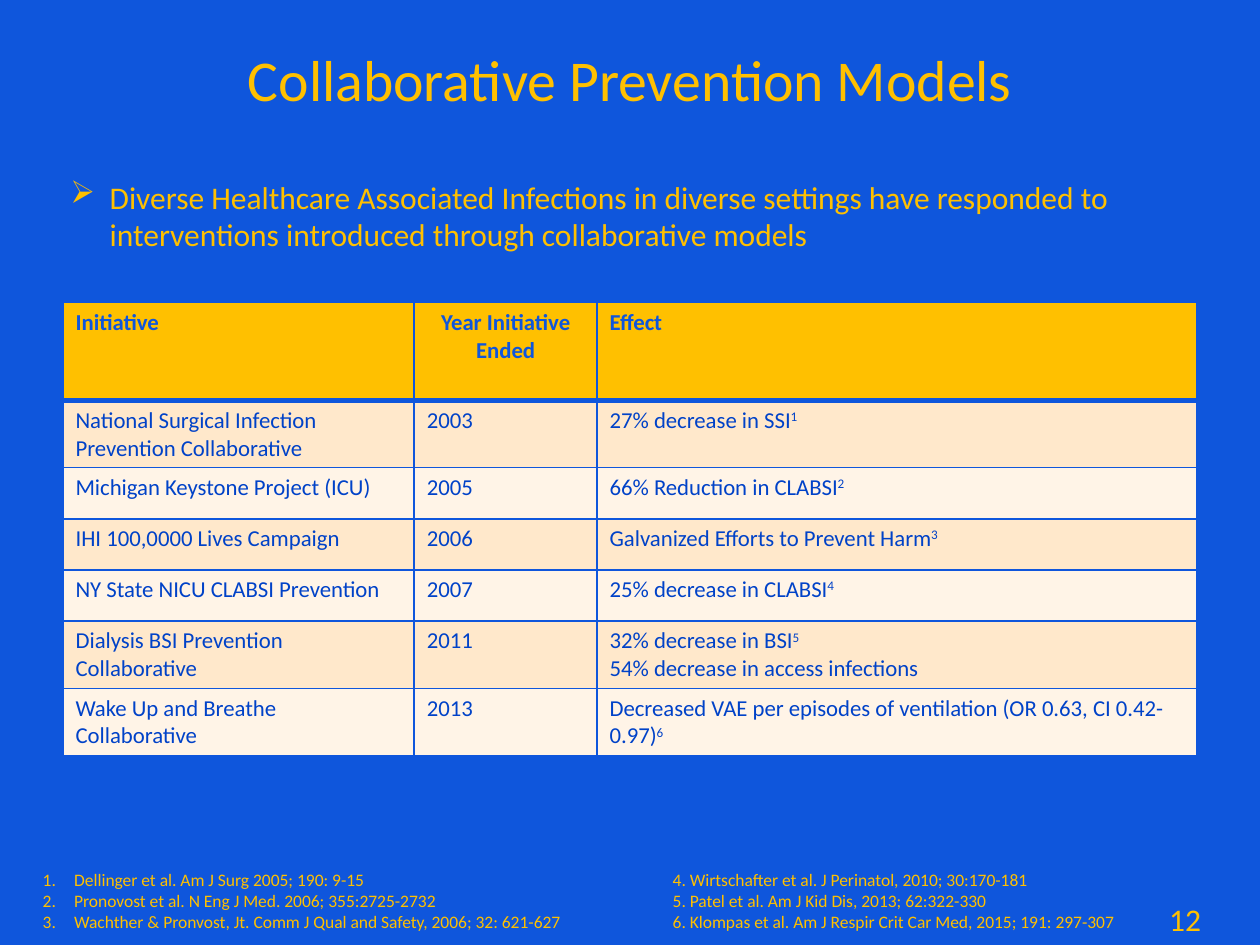
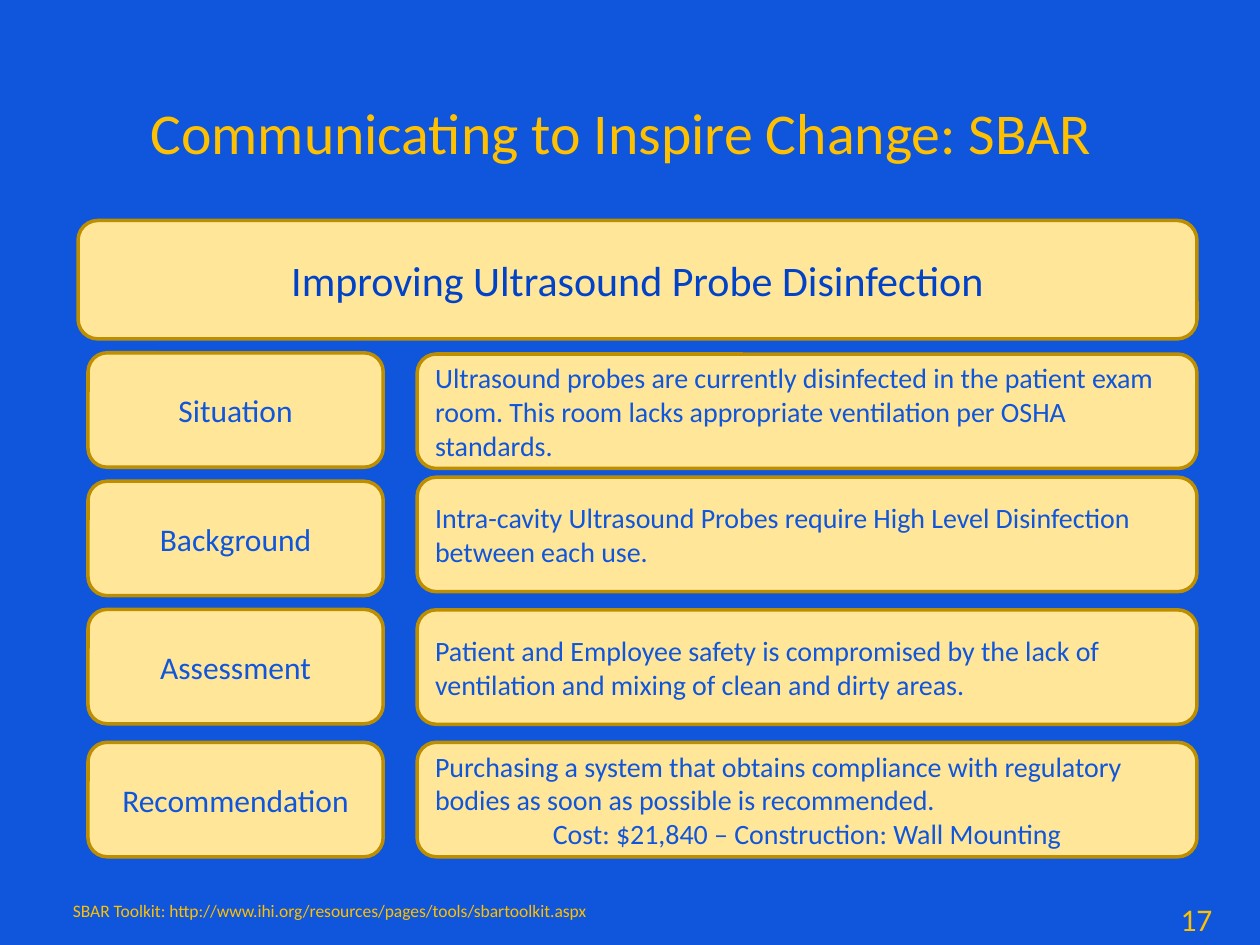
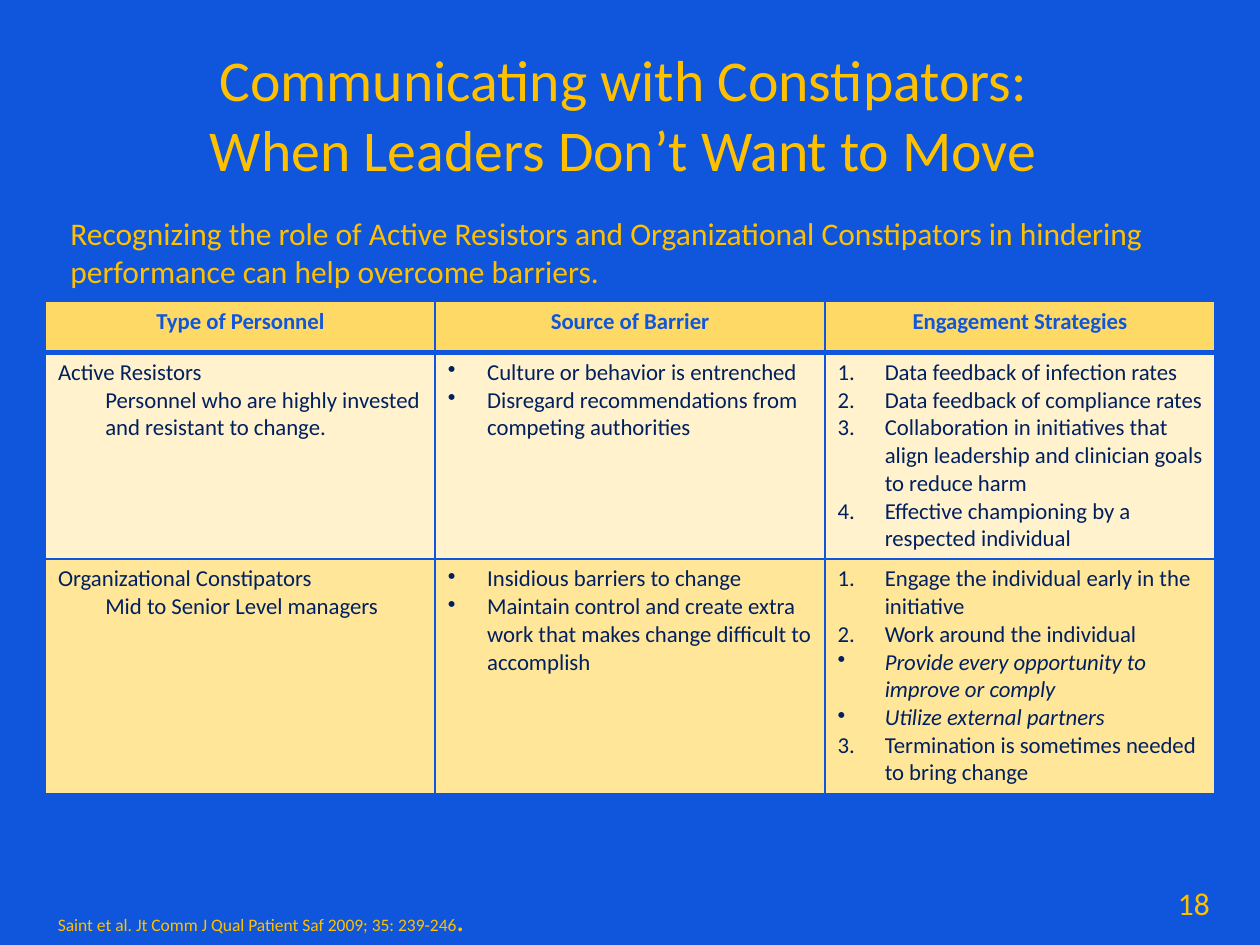
"""Build three slides on collaborative prevention and communicating for change."""
from dataclasses import dataclass
from typing import Optional

from lxml.etree import SubElement
from pptx import Presentation
from pptx.dml.color import RGBColor
from pptx.enum.shapes import MSO_SHAPE as Shape
from pptx.enum.text import MSO_ANCHOR as Anchor, PP_ALIGN as Align
from pptx.oxml.ns import qn
from pptx.util import Pt

FONT = "Calibri"
COLORS = {
    "blue": "0F56DC", "deep": "0042C8", "navy": "002060", "gold": "FFC000",
    "sand": "FFE699", "bronze": "BD8E00", "amber": "FFD966", "cream": "FFF2CC",
    "peach": "FFE8CB", "pale": "FFF4E7",
}


@dataclass
class Line:
    text: str
    marker: Optional[str] = None
    left: float = 0
    hang: float = 0
    align: Align = Align.LEFT
    italic: bool = False
    start: int = 1
    tab: float = 0


def bullet(text):
    return Line(text, "•", 22.5, 22.5)


def step(text, start=1):
    return Line(text, "1.", 27, 27, start=start)


def substep(text):
    return Line(text, "•", 27, 27, italic=True)


def centered(text):
    return Line(text, align=Align.CENTER)


def detail(text):
    return Line(text, left=27)


class Deck:
    """Hold the shared style and the slide being filled."""

    def __init__(self):
        self.prs = Presentation()
        self.prs.slide_width, self.prs.slide_height = Pt(720), Pt(540)
        self.slide = None

    def color(self, name):
        return RGBColor.from_string(COLORS[name])

    def paint(self, target, name):
        target.fill.solid()
        target.fill.fore_color.rgb = self.color(name)

    def new_slide(self):
        self.slide = self.prs.slides.add_slide(self.prs.slide_layouts[6])
        self.paint(self.slide.background, "blue")

    def add_run(self, paragraph, text, size, color, bold=False, italic=False, raised=False):
        run = paragraph.add_run()
        run.text = text
        font = run.font
        font.name, font.size, font.bold, font.italic = FONT, Pt(size), bold, italic
        font.color.rgb = self.color(color)
        if raised:
            run._r.get_or_add_rPr().set("baseline", "30000")

    def format_line(self, paragraph, line):
        paragraph.alignment = line.align
        props = paragraph._p.get_or_add_pPr()
        if line.left:
            props.set("marL", str(Pt(line.left)))
            props.set("indent", str(-Pt(line.hang)))
        if line.marker == "1.":
            number = SubElement(props, qn("a:buAutoNum"), type="arabicPeriod")
            if line.start > 1:
                number.set("startAt", str(line.start))
        elif line.marker:
            SubElement(props, qn("a:buChar"), char=line.marker)
        if line.tab:
            stops = SubElement(props, qn("a:tabLst"))
            SubElement(stops, qn("a:tab"), pos=str(Pt(line.tab)), algn="l")

    def add_lines(self, frame, lines, size, color, bold=False):
        """Put lines into a frame; text after ^ is raised."""
        frame.word_wrap = True
        for index, line in enumerate(lines):
            line = Line(line) if isinstance(line, str) else line
            paragraph = frame.add_paragraph() if index else frame.paragraphs[0]
            self.format_line(paragraph, line)
            body, _, reference = line.text.partition("^")
            for row, part in enumerate(body.split("\n")):
                if row:
                    paragraph.add_line_break()
                self.add_run(paragraph, part, size, color, bold, line.italic)
            if reference:
                self.add_run(paragraph, reference, size, color, raised=True)

    def text(self, box, lines, size):
        frame = self.slide.shapes.add_textbox(*map(Pt, box)).text_frame
        self.add_lines(frame, lines, size, "gold")
        return frame

    def title(self, text, left=36, top=21.6):
        self.text((left, top, 648, 90), [centered(text)], 33)

    def page_number(self, number, left, top):
        self.text((left, top, 46, 29), [str(number)], 18)

    def card(self, box, lines, size, color="blue"):
        card = self.slide.shapes.add_shape(Shape.ROUNDED_RECTANGLE, *map(Pt, box))
        card.shadow.inherit = False
        self.paint(card, "sand")
        card.line.color.rgb = self.color("bronze")
        card.line.width = Pt(2)
        card.text_frame.vertical_anchor = Anchor.MIDDLE
        self.add_lines(card.text_frame, lines, size, color)

    def cell_borders(self, cell, top, bottom):
        props = cell._tc.get_or_add_tcPr()
        for position, (side, width) in enumerate(
                {"lnL": 1, "lnR": 1, "lnT": top, "lnB": bottom}.items()):
            edge = props.makeelement(qn(f"a:{side}"), {"w": str(Pt(width))})
            fill = SubElement(edge, qn("a:solidFill"))
            SubElement(fill, qn("a:srgbClr"), val=COLORS["blue"])
            props.insert(position, edge)

    def table(self, left, top, widths, heights, rows, header_fill, bands, color):
        table = self.slide.shapes.add_table(
            len(rows), len(widths), Pt(left), Pt(top),
            Pt(sum(widths)), Pt(sum(heights))).table
        for column, width in zip(table.columns, widths):
            column.width = Pt(width)
        for r, (row, height) in enumerate(zip(rows, heights)):
            table.rows[r].height = Pt(height)
            for c, lines in enumerate(row):
                cell = table.cell(r, c)
                self.paint(cell, bands[(r - 1) % 2] if r else header_fill)
                self.cell_borders(cell, 3 if r == 1 else 1, 1 if r else 3)
                self.add_lines(cell.text_frame, lines, 13, color if r else "blue", bold=not r)


def models_slide(deck):
    deck.new_slide()
    deck.title("Collaborative Prevention Models")
    initiatives = [
        (["Initiative"], [centered("Year Initiative Ended")], ["Effect"]),
        (["National Surgical Infection Prevention Collaborative"], ["2003"],
         ["27% decrease in SSI^1"]),
        (["Michigan Keystone Project (ICU)"], ["2005"], ["66% Reduction in CLABSI^2"]),
        (["IHI 100,0000 Lives Campaign"], ["2006"],
         ["Galvanized Efforts to Prevent Harm^3"]),
        (["NY State NICU CLABSI Prevention"], ["2007"], ["25% decrease in CLABSI^4"]),
        (["Dialysis BSI Prevention Collaborative"], ["2011"],
         ["32% decrease in BSI^5", "54% decrease in access infections"]),
        (["Wake Up and Breathe Collaborative"], ["2013"],
         ["Decreased VAE per episodes of ventilation (OR 0.63, CI 0.42-0.97)^6"]),
    ]
    deck.table(36, 172.8, (200.7, 104.5, 342.8), [56] + [29.2] * 6, initiatives,
               "gold", ("peach", "pale"), "deep")
    deck.page_number(12, 661, 510.5)
    references = [
        "Dellinger et al. Am J Surg 2005; 190: 9-15"
        "\t4. Wirtschafter et al. J Perinatol, 2010; 30:170-181",
        "Pronovost et al. N Eng J Med. 2006; 355:2725-2732"
        "\t5. Patel et al. Am J Kid Dis, 2013; 62:322-330",
        "Wachther & Pronvost, Jt. Comm J Qual and Safety, 2006; 32: 621-627"
        "\t6. Klompas et al. Am J Respir Crit Car Med, 2015; 191: 297-307",
    ]
    deck.text((17.3, 493.2, 686, 46),
              [Line(text, "1.", 18, 18, tab=360) for text in references], 10)
    deck.text((33.1, 97.9, 654, 51), [Line(
        "Diverse Healthcare Associated Infections in diverse settings have responded to "
        "interventions introduced through collaborative models", "➢", 22.5, 22.5)], 18)


def sbar_slide(deck):
    deck.new_slide()
    deck.title("Communicating to Inspire Change: SBAR", 31, 51.8)
    deck.page_number(17, 667.5, 510.5)
    deck.card((44.6, 126, 639.4, 67.7),
              [centered("Improving Ultrasound Probe Disinfection")], 24, "deep")
    sections = [
        ("Situation", 201.6, 202.3,
         ["Ultrasound probes are currently disinfected in the patient exam room. "
          "This room lacks appropriate ventilation per OSHA standards."]),
        ("Background", 275, 272.7,
         ["Intra-cavity Ultrasound Probes require High Level Disinfection "
          "between each use."]),
        ("Assessment", 348.2, 348.5,
         ["Patient and Employee safety is compromised by the lack of ventilation "
          "and mixing of clean and dirty areas."]),
        ("Recommendation", 424.2, 424.2,
         ["Purchasing a system that obtains compliance with regulatory bodies "
          "as soon as possible is recommended.",
          centered("Cost: $21,840 – Construction: Wall Mounting")]),
    ]
    for heading, heading_top, message_top, message in sections:
        deck.card((50.3, heading_top, 168.7, 65.4), [centered(heading)], 18)
        deck.card((238.4, message_top, 445.6, 65.4), message, 16)
    deck.text((34.6, 510.5, 407, 19.4),
              ["SBAR Toolkit: http://www.ihi.org/resources/pages/tools/sbartoolkit.aspx"], 10)


def constipators_slide(deck):
    deck.new_slide()
    deck.title("Communicating with Constipators: \nWhen Leaders Don’t Want to Move ")
    deck.page_number(18, 666, 501.8)
    personnel = [
        [[centered(heading)] for heading in
         ("Type of Personnel", "Source of Barrier", "Engagement Strategies")],
        (["Active Resistors",
          detail("Personnel who are highly invested and resistant to change.")],
         [bullet("Culture or behavior is entrenched"),
          bullet("Disregard recommendations from competing authorities")],
         [step("Data feedback of infection rates"),
          step("Data feedback of compliance rates"),
          step("Collaboration in initiatives that align leadership and clinician "
               "goals to reduce harm"),
          step("Effective championing by a respected individual")]),
        (["Organizational Constipators", detail("Mid to Senior Level managers")],
         [bullet("Insidious barriers to change"),
          bullet("Maintain control and create extra work that makes change difficult "
                 "to accomplish")],
         [step("Engage the individual early in the initiative"),
          step("Work around the individual"),
          substep("Provide every opportunity to improve or comply"),
          substep("Utilize external partners"),
          step("Termination is sometimes needed to bring change", 3)]),
    ]
    deck.table(26, 172.2, [222.7] * 3, (29.2, 118, 134), personnel,
               "amber", ("cream", "sand"), "navy")
    deck.text((33.1, 118.8, 633, 51),
              ["Recognizing the role of Active Resistors and Organizational Constipators "
               "in hindering performance can help overcome barriers."], 18)
    source = deck.text((26, 511, 591, 29),
                       ["Saint et al. Jt Comm J Qual Patient Saf 2009; 35: 239-246"], 10)
    deck.add_run(source.paragraphs[0], ".", 18, "gold")


def main():
    deck = Deck()
    models_slide(deck)
    sbar_slide(deck)
    constipators_slide(deck)
    deck.prs.save("out.pptx")


if __name__ == "__main__":
    main()
